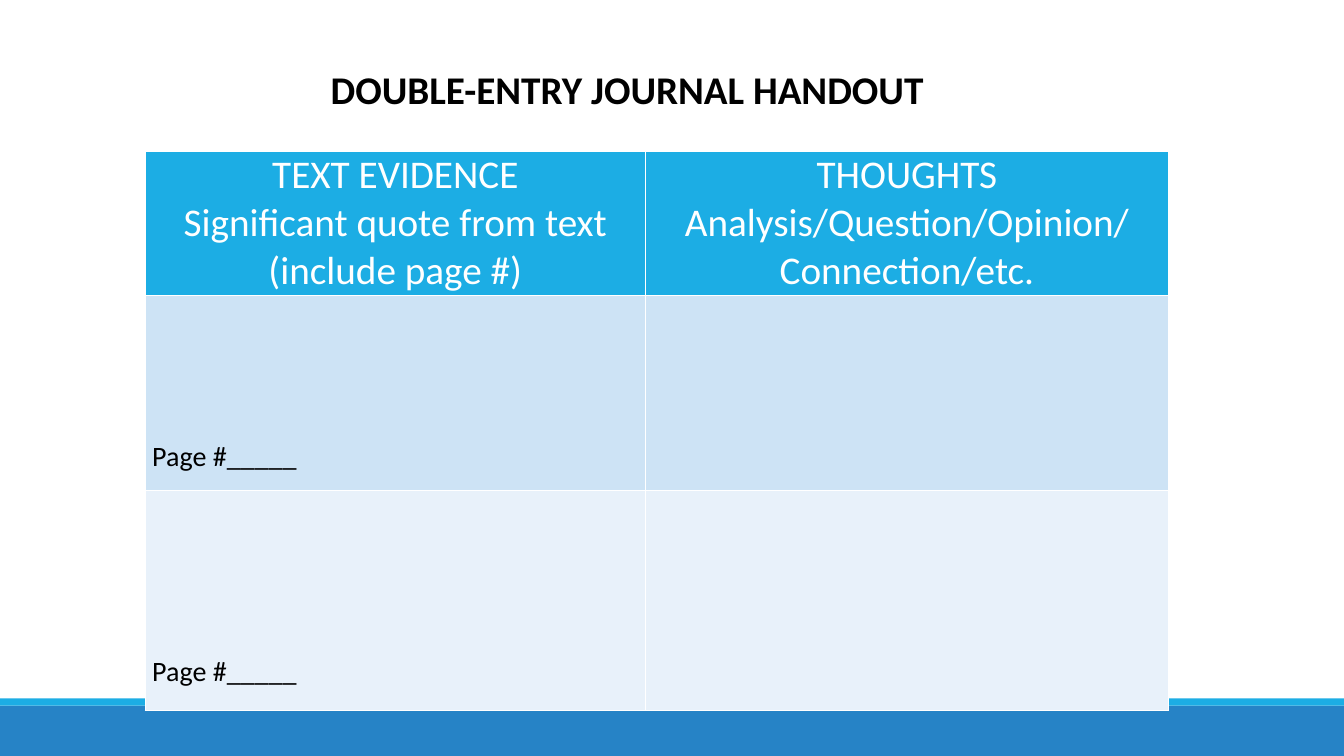
from dataclasses import dataclass

from lxml.etree import SubElement
from pptx import Presentation
from pptx.dml.color import RGBColor
from pptx.enum.shapes import MSO_SHAPE
from pptx.enum.text import MSO_ANCHOR, PP_ALIGN
from pptx.oxml.ns import qn
from pptx.util import Inches, Pt


@dataclass(frozen=True)
class Theme:
    font: str = "Calibri"
    head: int = 28
    body: int = 20
    white: str = "FFFFFF"
    ink: str = "000000"
    sky: str = "1CADE4"
    blue: str = "2683C6"
    tints: tuple = ("CDE3F5", "E8F1FA")


class Deck:
    def __init__(self, theme):
        self.theme = theme
        self.show = Presentation()
        self.show.slide_width = Inches(13.33)
        self.show.slide_height = Inches(7.5)
        self.slide = self.show.slides.add_slide(self.show.slide_layouts[5])

    def style(self, frame, size, color, align, bold=False):
        for para in frame.paragraphs:
            para.alignment = align
            for run in para.runs:
                font = run.font
                font.name = self.theme.font
                font.size = Pt(size)
                font.bold = bold
                font.color.rgb = RGBColor.from_string(color)

    def band(self, top, height, color):
        shape = self.slide.shapes.add_shape(
            MSO_SHAPE.RECTANGLE, 0, Inches(top), self.show.slide_width, Inches(height))
        shape.shadow.inherit = False
        shape.fill.solid()
        shape.fill.fore_color.rgb = RGBColor.from_string(color)
        shape.line.fill.background()

    def title(self, text, left, top, width, height):
        shape = self.slide.shapes.title
        shape.left, shape.top = Inches(left), Inches(top)
        shape.width, shape.height = Inches(width), Inches(height)
        frame = shape.text_frame
        frame.text = text
        frame.word_wrap = True
        frame.vertical_anchor = MSO_ANCHOR.TOP
        self.style(frame, self.theme.head, self.theme.ink, PP_ALIGN.LEFT, True)

    def edge(self, cell):
        """Draw thin white borders; they must precede the cell's fill."""
        props = cell._tc.get_or_add_tcPr()
        for side in ("a:lnL", "a:lnR", "a:lnT", "a:lnB"):
            line = SubElement(props, qn(side), w=str(Pt(1)))
            fill = SubElement(line, qn("a:solidFill"))
            SubElement(fill, qn("a:srgbClr"), val=self.theme.white)

    def cell(self, cell, text, fill, size, color, align):
        self.edge(cell)
        cell.fill.solid()
        cell.fill.fore_color.rgb = RGBColor.from_string(fill)
        cell.margin_left = cell.margin_right = Inches(0.07)
        cell.margin_top = cell.margin_bottom = 0
        cell.text_frame.text = text
        self.style(cell.text_frame, size, color, align)

    def table(self, left, top, widths, heights, heads, note, gaps):
        """Add a header row, then tinted rows with a note above each bottom gap."""
        theme = self.theme
        grid = self.slide.shapes.add_table(
            len(heights), len(widths), Inches(left), Inches(top),
            Inches(sum(widths)), Inches(sum(heights))).table
        for col, width in zip(grid.columns, widths):
            col.width = Inches(width)
        for row, height in zip(grid.rows, heights):
            row.height = Inches(height)
        for col, head in enumerate(heads):
            self.cell(grid.cell(0, col), head, theme.sky,
                      theme.head, theme.white, PP_ALIGN.CENTER)
        for row, (tint, gap) in enumerate(zip(theme.tints, gaps), 1):
            for col, text in enumerate((note, "")):
                cell = grid.cell(row, col)
                self.cell(cell, text, tint, theme.body, theme.ink, PP_ALIGN.LEFT)
                cell.vertical_anchor = MSO_ANCHOR.BOTTOM
                cell.margin_bottom = Inches(gap)


def main():
    theme = Theme()
    deck = Deck(theme)
    deck.band(7, 0.5, theme.blue)
    deck.band(6.93, 0.07, theme.sky)
    deck.table(
        1.44, 1.5, (4.96, 5.19), (1.43, 1.94, 2.18),
        ("TEXT EVIDENCE\nSignificant quote from text (include page #)",
         "THOUGHTS\nAnalysis/Question/Opinion/\nConnection/etc."),
        "Page #_____", (0.17, 0.21))
    deck.title("DOUBLE-ENTRY JOURNAL HANDOUT", 3.18, 0.6, 9, 0.57)
    deck.show.save("out.pptx")


if __name__ == "__main__":
    main()
